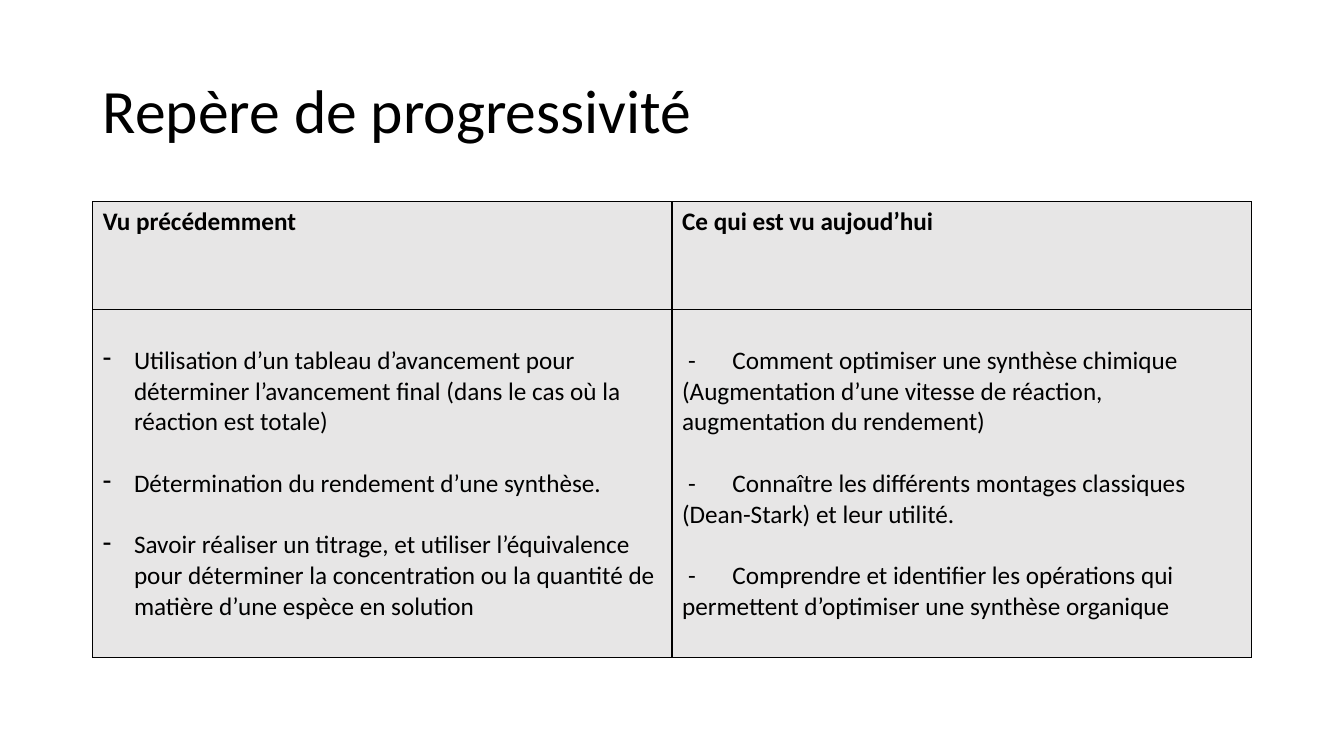
from pptx import Presentation, util as u
from pptx.dml.color import RGBColor
from pptx.enum import text
from pptx.oxml import parse_xml
from pptx.oxml.ns import nsdecls

HEADS = ["Vu précédemment", "Ce qui est vu aujoud’hui"]
SEEN = [
    "Utilisation d’un tableau d’avancement pour déterminer l’avancement final (dans le cas où la réaction est totale)",
    "Détermination du rendement d’une synthèse.",
    "Savoir réaliser un titrage, et utiliser l’équivalence pour déterminer la concentration ou la quantité de matière d’une espèce en solution",
]
TODAY = [
    "Comment optimiser une synthèse chimique (Augmentation d’une vitesse de réaction, augmentation du rendement)",
    "Connaître les différents montages classiques (Dean-Stark) et leur utilité.",
    "Comprendre et identifier les opérations qui permettent d’optimiser une synthèse organique",
]


def color(code):
    return RGBColor.from_string(code)


def node(tag, attrs="", inner=""):
    return parse_xml(f'<a:{tag} {nsdecls("a")} {attrs}>{inner}</a:{tag}>')


class Deck:
    font, ink, shade = "Calibri", "000000", "E7E6E6"
    big, small, gap = 44, 18, 22
    cols, rows = 29, 75

    def __init__(self, width, height):
        self.file = Presentation()
        self.file.slide_width = u.Inches(width)
        self.file.slide_height = u.Inches(height)
        self.slide = self.file.slides.add_slide(self.file.slide_layouts[5])

    def x(self, count):
        return int(self.file.slide_width * count / self.cols)

    def y(self, count):
        return int(self.file.slide_height * count / self.rows)

    def style(self, para, size, bold=False):
        para.alignment = text.PP_ALIGN.LEFT
        font = para.font
        font.name, font.size, font.bold = self.font, u.Pt(size), bold
        font.color.rgb = color(self.ink)

    def title(self, words, left, top, width, height):
        shape = self.slide.shapes.title
        shape.left, shape.top = self.x(left), self.y(top)
        shape.width, shape.height = self.x(width), self.y(height)
        frame = shape.text_frame
        frame.text = words
        frame.auto_size = text.MSO_AUTO_SIZE.NONE
        frame.vertical_anchor = text.MSO_ANCHOR.MIDDLE
        para = frame.paragraphs[0]
        para.line_spacing = 0.9
        self.style(para, self.big)

    def table(self, left, top, width, heights):
        grid = self.slide.shapes.add_table(
            len(heights), 2, self.x(left), self.y(top),
            self.x(width), self.y(sum(heights))).table
        for row, height in zip(grid.rows, heights):
            row.height = self.y(height)
        for cell in grid.iter_cells():
            self.frame(cell)
        return grid

    def frame(self, cell):
        props = cell._tc.get_or_add_tcPr()
        line = f'<a:solidFill><a:srgbClr val="{self.ink}"/></a:solidFill>'
        for side in "LRTB":
            props.append(node("ln" + side, f'w="{u.Pt(1)}"', line))
        cell.fill.solid()
        cell.fill.fore_color.rgb = color(self.shade)

    def head(self, cell, words):
        cell.text = words
        self.style(cell.text_frame.paragraphs[0], self.small, True)

    def items(self, cell, lines, hang):
        cell.margin_top = u.Inches(0.05) + u.Pt(self.gap)
        cell.text = "\n".join(lines if hang else ["-\t" + line for line in lines])
        for spot, para in enumerate(cell.text_frame.paragraphs):
            self.style(para, self.small)
            para.space_before = u.Pt(self.gap if spot else 0)
            props = para._p.get_or_add_pPr()
            if hang:
                props.set("marL", str(u.Inches(0.31)))
                props.set("indent", str(-u.Inches(0.31)))
                props.insert_element_before(node("buChar", 'char="-"'), "a:defRPr")
            else:
                props.set("marL", "0")
                props.set("indent", str(u.Inches(0.06)))
                stop = f'<a:tab pos="{u.Inches(0.47)}" algn="l"/>'
                props.insert_element_before(node("tabLst", "", stop), "a:defRPr")


def main():
    deck = Deck(13.33, 7.5)
    deck.title("Repère de progressivité", 2, 4, 25, 14.5)
    grid = deck.table(2, 20, 25, [10.7, 34.5])
    for col, words in enumerate(HEADS):
        deck.head(grid.cell(0, col), words)
    deck.items(grid.cell(1, 0), SEEN, True)
    deck.items(grid.cell(1, 1), TODAY, False)
    deck.file.save("out.pptx")


if __name__ == "__main__":
    main()
